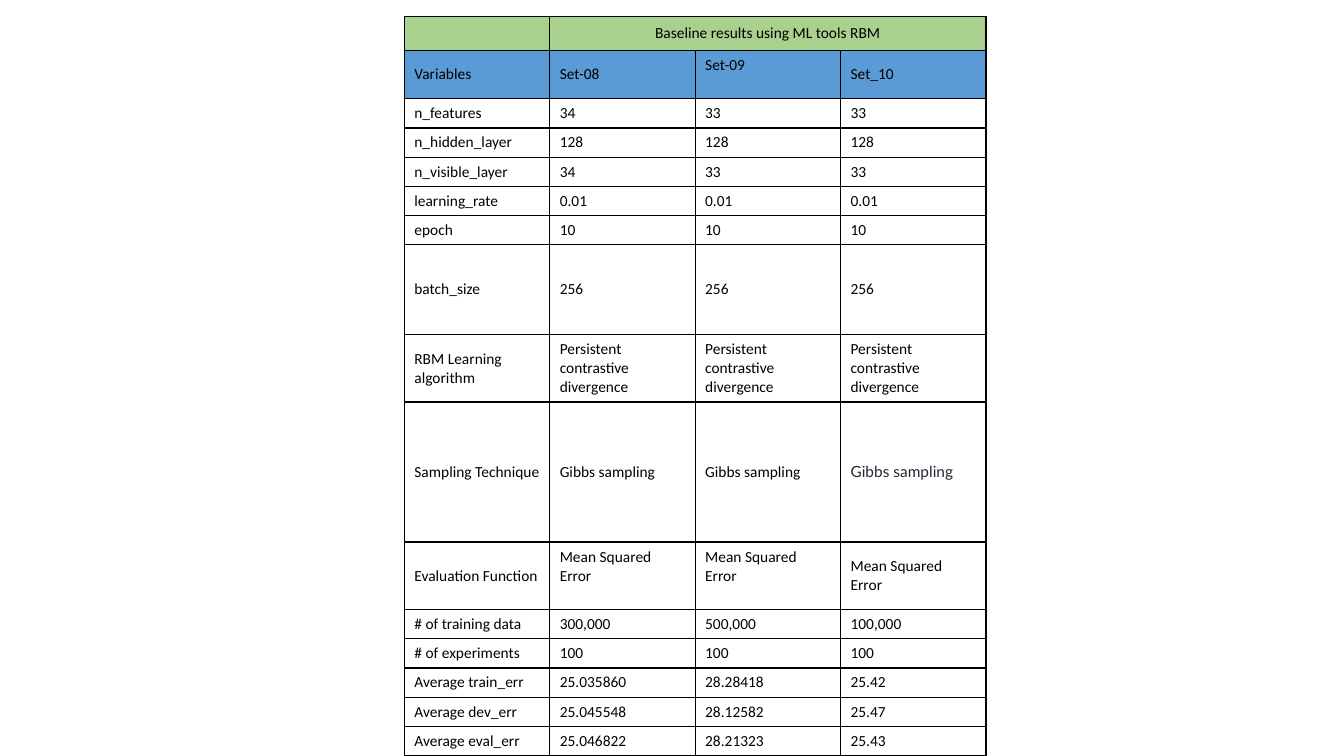
"""Build a slide with a table of baseline RBM results for three data sets."""
import pptx
import pptx.dml.color
import pptx.enum.text
import pptx.oxml
import pptx.oxml.ns
import pptx.util

Inches = pptx.util.Inches
Pt = pptx.util.Pt

THEME = {
    "font": "Calibri", "accent_font": "Lato", "size": 11,
    "ink": "000000", "accent": "222832", "line": "000000",
    "title": "A9D18E", "head": "5B9BD5",
}
LINE = 0.29
ROWS = [
    (0.34, ["", "Baseline results using ML tools RBM", "", ""]),
    (0.48, ["Variables", "Set-08", "Set-09", "Set_10"]),
    (LINE, ["n_features", "34", "33", "33"]),
    (LINE, ["n_hidden_layer", "128", "128", "128"]),
    (LINE, ["n_visible_layer", "34", "33", "33"]),
    (LINE, ["learning_rate", "0.01", "0.01", "0.01"]),
    (LINE, ["epoch", "10", "10", "10"]),
    (0.89, ["batch_size"] + ["256"] * 3),
    (0.67, ["RBM Learning algorithm"] + ["Persistent contrastive divergence"] * 3),
    (1.39, ["Sampling Technique"] + ["Gibbs sampling"] * 3),
    (0.67, ["Evaluation Function"] + ["Mean Squared Error"] * 3),
    (LINE, ["# of training data", "300,000", "500,000", "100,000"]),
    (LINE, ["# of experiments", "100", "100", "100"]),
    (LINE, ["Average train_err", "25.035860", "28.28418", "25.42"]),
    (LINE, ["Average dev_err", "25.045548", "28.12582", "25.47"]),
    (LINE, ["Average eval_err", "25.046822", "28.21323", "25.43"]),
]
FILLS = {0: THEME["title"], 1: THEME["head"]}
RAISED = {(1, 2), (10, 1), (10, 2)}
ACCENT = (9, 3)
LEFT, TOP, WIDTH = 4.01, 0.16, 5.77


def color(code):
    return pptx.dml.color.RGBColor.from_string(code)


def border(cell):
    props = cell._tc.get_or_add_tcPr()
    for side in "LRTB":
        props.append(pptx.oxml.parse_xml(
            f'<a:ln{side} {pptx.oxml.ns.nsdecls("a")} w="{Pt(1)}"><a:solidFill>'
            f'<a:srgbClr val="{THEME["line"]}"/></a:solidFill></a:ln{side}>'))


def style(cell, text, spot):
    border(cell)
    if spot[0] in FILLS:
        cell.fill.solid()
        cell.fill.fore_color.rgb = color(FILLS[spot[0]])
    else:
        cell.fill.background()
    cell.vertical_anchor = pptx.enum.text.MSO_ANCHOR.MIDDLE
    if spot in RAISED:
        cell.margin_bottom = Inches(0.24)
    if not text:
        cell.margin_top = cell.margin_bottom = 0
    cell.text = text
    line = cell.text_frame.paragraphs[0]
    if spot[0] == 0:
        line.alignment = pptx.enum.text.PP_ALIGN.CENTER
    special = spot == ACCENT
    line.font.name = THEME["accent_font" if special else "font"]
    line.font.size = Pt(THEME["size"])
    line.font.bold = False
    line.font.color.rgb = color(THEME["accent" if special else "ink"])


def main():
    deck = pptx.Presentation()
    deck.slide_width, deck.slide_height = Inches(13.33), Inches(7.5)
    slide = deck.slides.add_slide(deck.slide_layouts[6])
    count = len(ROWS[0][1])
    height = sum(row[0] for row in ROWS)
    table = slide.shapes.add_table(
        len(ROWS), count, Inches(LEFT), Inches(TOP),
        Inches(WIDTH), Inches(height)).table
    table.first_row = table.horz_banding = False
    for column in table.columns:
        column.width = Inches(WIDTH / count)
    for r, (tall, texts) in enumerate(ROWS):
        table.rows[r].height = Inches(tall)
        for c, text in enumerate(texts):
            style(table.cell(r, c), text, (r, c))
    table.cell(0, 1).merge(table.cell(0, count - 1))
    deck.save("out.pptx")


if __name__ == "__main__":
    main()
